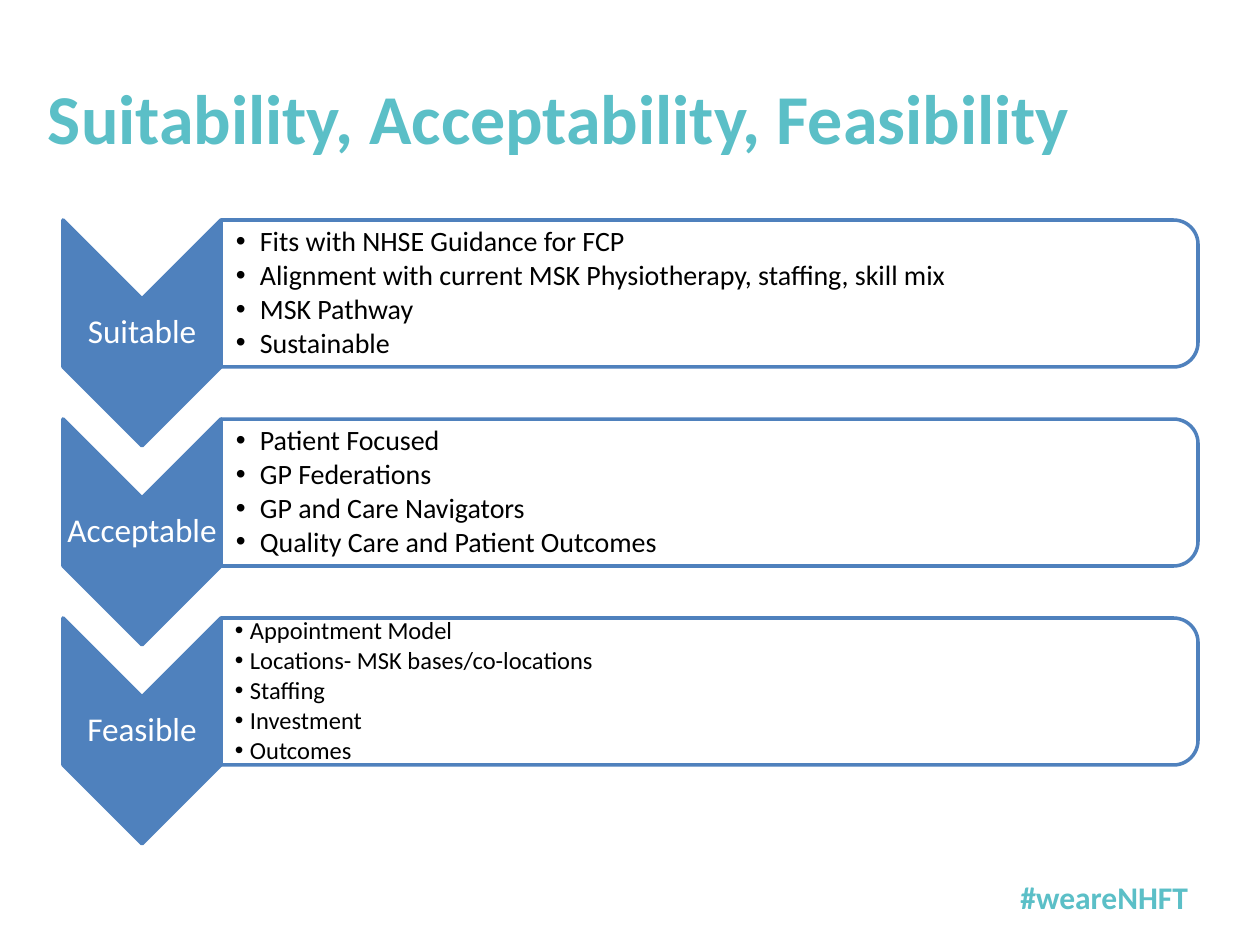
from lxml.etree import SubElement
from pptx import Presentation
from pptx.dml.color import RGBColor
from pptx.enum.shapes import MSO_SHAPE as Shape
from pptx.enum.text import MSO_ANCHOR as Anchor, PP_ALIGN as Align
from pptx.oxml.ns import qn
from pptx.util import Emu, Pt

TITLE = "Suitability, Acceptability, Feasibility"
HASHTAG = "#weareNHFT"
CRITERIA = [
    {"name": "Suitable", "size": 16, "indent": 24, "inset": 15, "points": [
        "Fits with NHSE Guidance for FCP",
        "Alignment with current MSK Physiotherapy, staffing, skill mix",
        "MSK Pathway",
        "Sustainable",
    ]},
    {"name": "Acceptable", "size": 16, "indent": 24, "inset": 15, "points": [
        "Patient Focused",
        "GP Federations",
        "GP and Care Navigators",
        "Quality Care and Patient Outcomes",
    ]},
    {"name": "Feasible", "size": 14, "indent": 15, "inset": 14, "points": [
        "Appointment Model",
        "Locations- MSK bases/co-locations",
        "Staffing",
        "Investment",
        "Outcomes",
    ]},
]
COLORS = {"teal": "5BBFC7", "blue": "4F81BD", "white": "FFFFFF", "black": "000000"}
FONT = "Calibri"

LEFT, TOP, PITCH = 63, 220, 199
CHEVRON_W, CHEVRON_H = 158, 226
PANEL_W, PANEL_H = 977, 147
POINTS_W, POINTS_H = 969, 132
LABEL_H = 68


def px(n):
    return Emu(round(n * 914400 / 126))


def rgb(name):
    return RGBColor.from_string(COLORS[name])


def add_turned(slide, preset, left, top, width, height, fill):
    x = left + (width - height) / 2
    y = top + (height - width) / 2
    shape = slide.shapes.add_shape(preset, px(x), px(y), px(height), px(width))
    shape.rotation = 90
    shape.shadow.inherit = False
    shape.fill.solid()
    shape.fill.fore_color.rgb = rgb(fill)
    shape.line.color.rgb = rgb("blue")
    shape.line.width = Pt(2)
    return shape


def add_text(slide, box, lines, size, color, bold=False, align=Align.LEFT,
             anchor=Anchor.MIDDLE, insets=(13, 6, 13, 6), spacing=1.0, after=0, indent=0):
    frame = slide.shapes.add_textbox(*map(px, box)).text_frame
    frame.word_wrap = True
    frame.vertical_anchor = anchor
    (frame.margin_left, frame.margin_top,
     frame.margin_right, frame.margin_bottom) = map(px, insets)
    frame.text = "\n".join(lines)
    for paragraph in frame.paragraphs:
        paragraph.alignment = align
        paragraph.line_spacing = spacing
        paragraph.space_after = Pt(after)
        if indent:
            props = paragraph._p.get_or_add_pPr()
            props.set("marL", str(px(indent)))
            props.set("indent", str(px(-indent)))
            SubElement(props, qn("a:buFont")).set("typeface", "Arial")
            SubElement(props, qn("a:buChar")).set("char", "•")
        for run in paragraph.runs:
            run.font.name = FONT
            run.font.size = Pt(size)
            run.font.bold = bold
            run.font.color.rgb = rgb(color)


def add_criterion(slide, criterion, top):
    panel_left = LEFT + CHEVRON_W
    add_turned(slide, Shape.CHEVRON, LEFT, top, CHEVRON_W, CHEVRON_H, "blue")
    add_text(slide, (LEFT, top + (CHEVRON_H - LABEL_H) / 2, CHEVRON_W, LABEL_H),
             [criterion["name"]], 19, "white", align=Align.CENTER,
             insets=(1, 1, 1, 1), spacing=0.9)
    panel = add_turned(slide, Shape.ROUND_2_SAME_RECTANGLE,
                       panel_left, top, PANEL_W, PANEL_H, "white")
    fill_color = panel.fill._xPr.find(qn("a:solidFill"))[0]
    SubElement(fill_color, qn("a:alpha")).set("val", "90000")
    add_text(slide, (panel_left, top + (PANEL_H - POINTS_H) / 2, POINTS_W, POINTS_H),
             criterion["points"], criterion["size"], "black",
             insets=(criterion["inset"], 1, 1, 1), spacing=0.9, after=2,
             indent=criterion["indent"])


def main():
    deck = Presentation()
    deck.slide_width, deck.slide_height = px(1260), px(945)
    slide = deck.slides.add_slide(deck.slide_layouts[6])
    add_text(slide, (907, 872, 294, 50), [HASHTAG], 18, "teal", bold=True,
             align=Align.RIGHT, anchor=Anchor.TOP)
    add_text(slide, (35, 38, 1134, 158), [TITLE], 40, "teal", bold=True)
    for row, criterion in enumerate(CRITERIA):
        add_criterion(slide, criterion, TOP + row * PITCH)
    deck.save("out.pptx")


if __name__ == "__main__":
    main()
